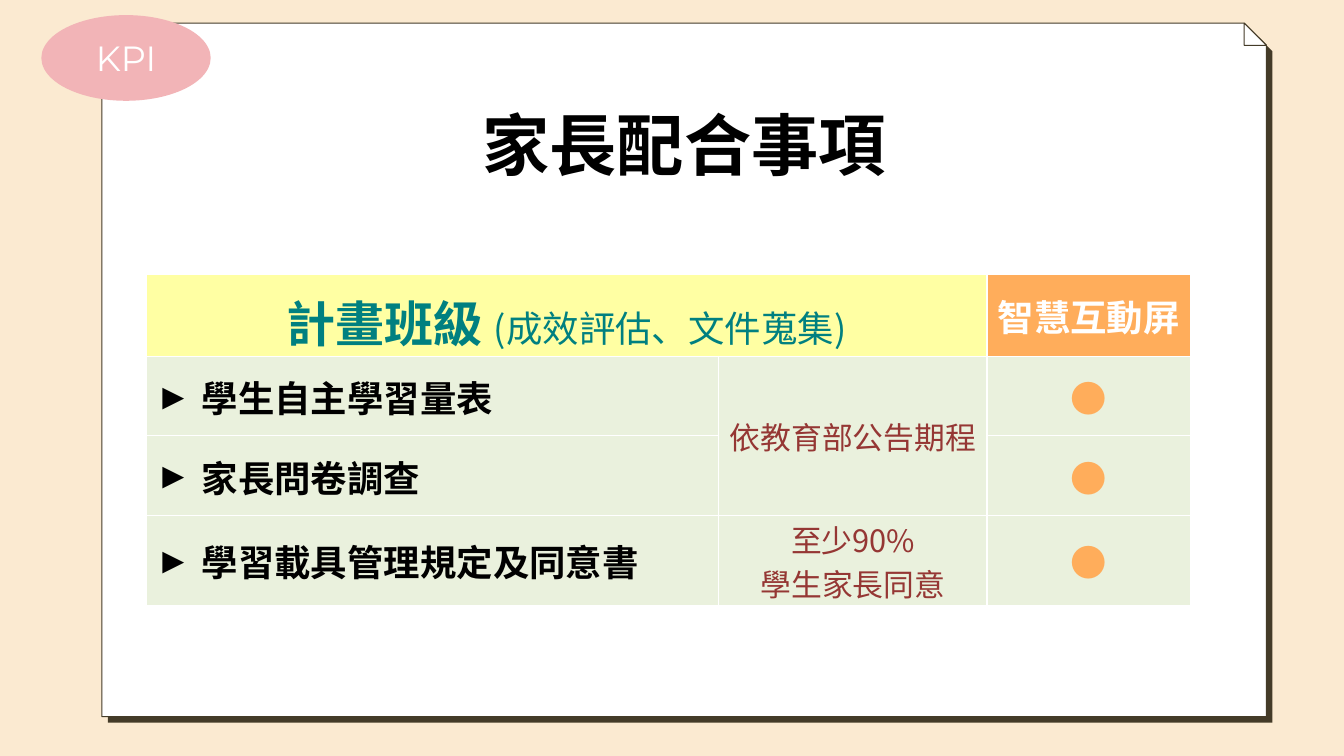
import pptx
import pptx.dml.color
import pptx.enum.shapes
import pptx.enum.text
import pptx.util
from lxml import etree
from pptx.oxml.ns import qn

Inches = pptx.util.Inches
Pt = pptx.util.Pt
CENTER = pptx.enum.text.PP_ALIGN.CENTER
LEFT = pptx.enum.text.PP_ALIGN.LEFT
MIDDLE = pptx.enum.text.MSO_ANCHOR.MIDDLE

SANS = "Noto Sans CJK TC"
CREAM, INK, WHITE, BLACK = "FBEAD1", "443B28", "FFFFFF", "000000"
PINK, YELLOW, ORANGE, GREEN = "F2B4B7", "FFFFA3", "FFAD5B", "EAF1DD"
TEAL, RED = "008080", "953734"


def paint(target, color):
    """Give a fill one solid colour."""
    target.solid()
    target.fore_color.rgb = pptx.dml.color.RGBColor.from_string(color)


def write(par, text, size=26, color=BLACK, bold=False, font=SANS,
          align=CENTER, space=None, mark=None):
    """Add one formatted run to a paragraph."""
    par.alignment = align
    if space:
        par.line_spacing = space
    if mark:
        props = par._p.get_or_add_pPr()
        props.set("marL", str(Inches(0.54)))
        props.set("indent", str(-Inches(0.46)))
        etree.SubElement(props, qn("a:buFont")).set("typeface", "Arial")
        etree.SubElement(props, qn("a:buChar")).set("char", mark)
    run = par.add_run()
    run.text = text
    run.font.size = Pt(size)
    run.font.bold = bold
    run.font.name = font
    paint(run.font.fill, color)
    east = etree.SubElement(run._r.get_or_add_rPr(), qn("a:ea"))
    east.set("typeface", font)


def outline(slide, points, fill, line=None):
    """Draw a closed polygon from points in inches."""
    spots = [(Inches(x), Inches(y)) for x, y in points]
    pen = slide.shapes.build_freeform(*spots[0], scale=1.0)
    pen.add_line_segments(spots[1:], close=True)
    shape = pen.convert_to_shape()
    shape.shadow.inherit = False
    paint(shape.fill, fill)
    if line:
        paint(shape.line.fill, line)
        shape.line.width = Pt(0.75)
    else:
        shape.line.fill.background()


def paper(slide, left, top, width, height):
    """Sheet with a folded corner and a hard shadow."""
    right, low = left + width, top + height
    fold, drop = 0.22, 0.06
    # Shadow
    outline(slide, [(left + drop, low), (left + drop, low + drop),
                    (right + drop, low + drop), (right + drop, top + fold + drop),
                    (right, top + fold), (right, low)], INK)
    # Sheet
    outline(slide, [(right - fold, top), (left, top), (left, low),
                    (right, low), (right, top + fold)], WHITE, INK)
    # Fold
    outline(slide, [(right - fold, top), (right - fold, top + fold),
                    (right, top + fold)], WHITE, INK)


def title(slide, left, top, width, height):
    """Heading in the title placeholder."""
    head = slide.shapes.title
    head.left, head.top = Inches(left), Inches(top)
    head.width, head.height = Inches(width), Inches(height)
    head.text_frame.vertical_anchor = MIDDLE
    write(head.text_frame.paragraphs[0], "家長配合事項", size=48, bold=True)


def badge(slide, left, top, width, height):
    """Oval label at the corner."""
    oval = slide.shapes.add_shape(
        pptx.enum.shapes.MSO_SHAPE.OVAL,
        Inches(left), Inches(top), Inches(width), Inches(height))
    oval.shadow.inherit = False
    paint(oval.fill, PINK)
    oval.line.fill.background()
    oval.text_frame.vertical_anchor = MIDDLE
    write(oval.text_frame.paragraphs[0], "KPI", size=25, color=WHITE,
          font="Montserrat")


def dress(cell, fill):
    """Set margins, white borders and fill of a table cell."""
    cell.vertical_anchor = MIDDLE
    cell.margin_left = cell.margin_right = cell.margin_top = Inches(0.01)
    cell.margin_bottom = 0
    props = cell._tc.get_or_add_tcPr()
    for side in ("L", "R", "T", "B"):
        line = etree.SubElement(props, qn("a:ln" + side), w=str(Pt(1)))
        solid = etree.SubElement(line, qn("a:solidFill"))
        etree.SubElement(solid, qn("a:srgbClr"), val=WHITE)
    paint(cell.fill, fill)


def chart(slide, left, top, widths, heights):
    """Table of duties, dates and the scheme they belong to."""
    grid = slide.shapes.add_table(
        len(heights), len(widths), Inches(left), Inches(top),
        Inches(sum(widths)), Inches(sum(heights))).table
    for col, width in zip(grid.columns, widths):
        col.width = Inches(width)
    for row, height in zip(grid.rows, heights):
        row.height = Inches(height)
    for r in range(len(heights)):
        for c in range(len(widths)):
            head = ORANGE if c == 2 else YELLOW
            dress(grid.cell(r, c), GREEN if r else head)
    grid.cell(0, 0).merge(grid.cell(0, 1))
    grid.cell(1, 1).merge(grid.cell(2, 1))

    # Header row
    first = grid.cell(0, 0).text_frame.paragraphs[0]
    write(first, "計畫班級 ", size=35, color=TEAL, bold=True, space=1.14)
    write(first, "(成效評估、文件蒐集)", color=TEAL)
    write(grid.cell(0, 2).text_frame.paragraphs[0], "智慧互動屏",
          color=WHITE, bold=True)

    # Duties and dots
    duties = ["學生自主學習量表", "家長問卷調查", "學習載具管理規定及同意書"]
    for r, duty in enumerate(duties, 1):
        write(grid.cell(r, 0).text_frame.paragraphs[0], duty, bold=True,
              align=LEFT, mark="►")
        write(grid.cell(r, 2).text_frame.paragraphs[0], "●", color=ORANGE,
              bold=True)

    # Dates and goals
    for r, lines in {1: ["依教育部公告期程"], 3: ["至少90%", "學生家長同意"]}.items():
        frame = grid.cell(r, 1).text_frame
        for i, text in enumerate(lines):
            par = frame.add_paragraph() if i else frame.paragraphs[0]
            write(par, text, size=22, color=RED)


def main():
    deck = pptx.Presentation()
    deck.slide_width, deck.slide_height = Inches(13.33), Inches(7.5)
    slide = deck.slides.add_slide(deck.slide_layouts[5])
    paint(slide.background.fill, CREAM)
    paper(slide, 1.01, 0.23, 11.55, 6.88)
    # Bring the title in front of the sheet
    slide.shapes._spTree.append(slide.shapes.title._element)
    title(slide, 1.49, 0.67, 10.59, 1.51)
    chart(slide, 1.45, 2.72, [5.68, 2.66, 2.02], [0.8, 0.79, 0.79, 0.88])
    badge(slide, 0.41, 0.15, 1.68, 0.85)
    deck.save("out.pptx")


if __name__ == "__main__":
    main()
